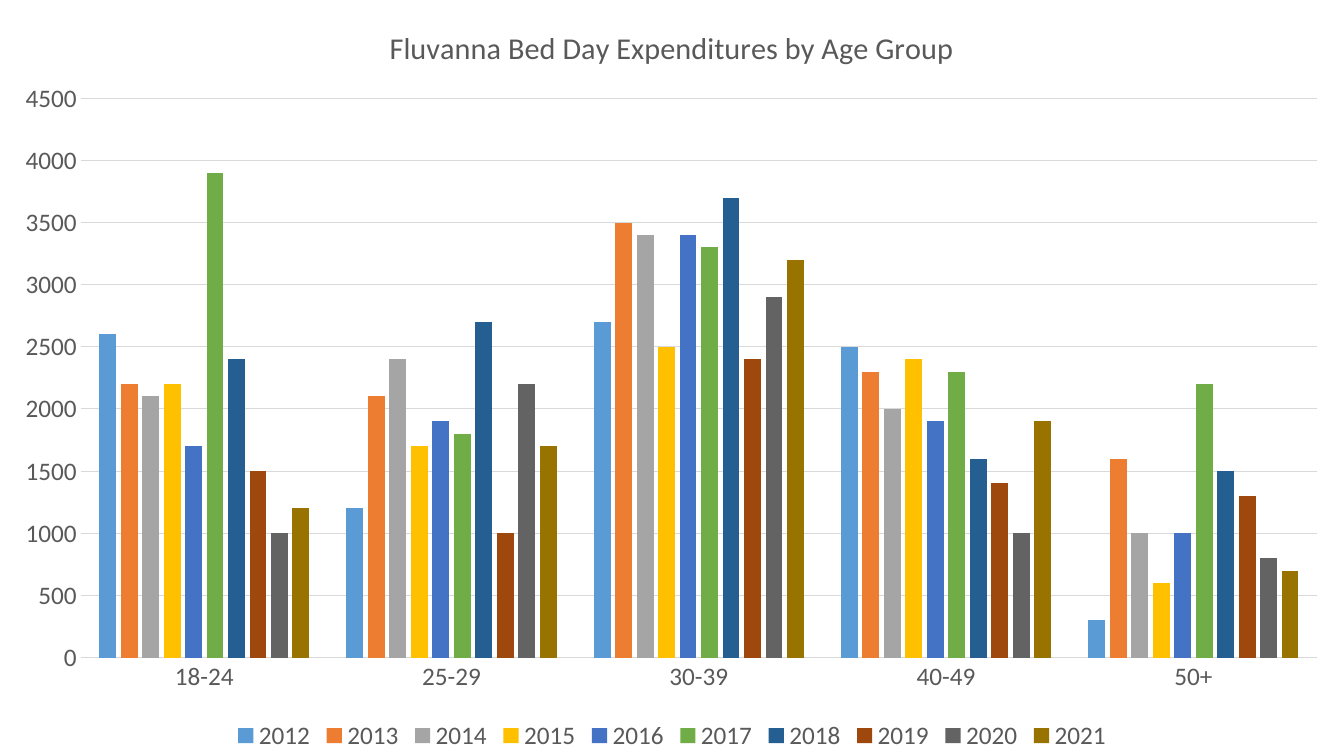
from lxml import etree
from pptx import Presentation
from pptx.chart.data import CategoryChartData
from pptx.dml.color import RGBColor
from pptx.enum.chart import XL_CHART_TYPE as ChartType
from pptx.enum.chart import XL_LEGEND_POSITION as LegendPosition
from pptx.enum.chart import XL_TICK_MARK as TickMark
from pptx.oxml.ns import qn
from pptx.util import Cm, Pt

WIDTH, HEIGHT = Cm(33.87), Cm(19.05)
FONT = "Calibri"
TITLE = "Fluvanna Bed Day Expenditures by Age Group"
TEXT_GREY = RGBColor(0x59, 0x59, 0x59)
LINE_GREY = RGBColor(0xD9, 0xD9, 0xD9)
PLOT_LAYOUT = [
    ("layoutTarget", "inner"), ("xMode", "edge"), ("yMode", "edge"),
    ("x", "0.06"), ("y", "0.13"), ("w", "0.92"), ("h", "0.74"),
]
AGE_GROUPS = ["18-24", "25-29", "30-39", "40-49", "50+"]
YEARS = [
    ("2012", RGBColor(0x5B, 0x9B, 0xD5), [2600, 1200, 2700, 2500, 300]),
    ("2013", RGBColor(0xED, 0x7D, 0x31), [2200, 2100, 3500, 2300, 1600]),
    ("2014", RGBColor(0xA5, 0xA5, 0xA5), [2100, 2400, 3400, 2000, 1000]),
    ("2015", RGBColor(0xFF, 0xC0, 0x00), [2200, 1700, 2500, 2400, 600]),
    ("2016", RGBColor(0x44, 0x72, 0xC4), [1700, 1900, 3400, 1900, 1000]),
    ("2017", RGBColor(0x70, 0xAD, 0x47), [3900, 1800, 3300, 2300, 2200]),
    ("2018", RGBColor(0x25, 0x5E, 0x91), [2400, 2700, 3700, 1600, 1500]),
    ("2019", RGBColor(0x9E, 0x48, 0x0E), [1500, 1000, 2400, 1400, 1300]),
    ("2020", RGBColor(0x63, 0x63, 0x63), [1000, 2200, 2900, 1000, 800]),
    ("2021", RGBColor(0x99, 0x73, 0x00), [1200, 1700, 3200, 1900, 700]),
]


def style_font(font, size):
    font.name = FONT
    font.size = Pt(size)
    font.bold = False
    font.color.rgb = TEXT_GREY


def style_line(line):
    line.color.rgb = LINE_GREY
    line.width = Pt(0.75)


def add_column_chart(slide):
    data = CategoryChartData()
    data.categories = AGE_GROUPS
    for year, _, values in YEARS:
        data.add_series(year, values)
    frame = slide.shapes.add_chart(
        ChartType.COLUMN_CLUSTERED, 0, 0, WIDTH, HEIGHT, data)
    return frame.chart


def place_plot(chart):
    area = chart.plots[0]._element.getparent()
    for layout in area.findall(qn("c:layout")):
        area.remove(layout)
    layout = etree.Element(qn("c:layout"))
    manual = etree.SubElement(layout, qn("c:manualLayout"))
    for name, value in PLOT_LAYOUT:
        etree.SubElement(manual, qn(f"c:{name}")).set("val", value)
    area.insert(0, layout)


def style_columns(chart):
    plot = chart.plots[0]
    plot.gap_width = 219
    plot.overlap = -27
    plot.vary_by_categories = False
    for series, (_, color, _) in zip(plot.series, YEARS):
        series.format.fill.solid()
        series.format.fill.fore_color.rgb = color


def style_axes(chart):
    ages, amounts = chart.category_axis, chart.value_axis
    for axis in (ages, amounts):
        axis.major_tick_mark = TickMark.NONE
        axis.minor_tick_mark = TickMark.NONE
        style_font(axis.tick_labels.font, 18)
    style_line(ages.format.line)
    amounts.format.line.fill.background()
    amounts.minimum_scale = 0
    amounts.maximum_scale = 4500
    amounts.major_unit = 500
    amounts.has_major_gridlines = True
    style_line(amounts.major_gridlines.format.line)


def add_title(chart):
    chart.has_title = True
    title = chart.chart_title
    title.include_in_layout = False
    para = title.text_frame.paragraphs[0]
    para.text = TITLE
    style_font(para.font, 21.6)
    style_font(para.runs[0].font, 21.6)


def add_legend(chart):
    chart.has_legend = True
    chart.legend.position = LegendPosition.BOTTOM
    chart.legend.include_in_layout = False
    style_font(chart.legend.font, 18)


def main():
    deck = Presentation()
    deck.slide_width, deck.slide_height = WIDTH, HEIGHT
    slide = deck.slides.add_slide(deck.slide_layouts.get_by_name("Blank"))
    chart = add_column_chart(slide)
    style_font(chart.font, 18)
    place_plot(chart)
    style_columns(chart)
    style_axes(chart)
    add_title(chart)
    add_legend(chart)
    deck.save("out.pptx")


if __name__ == "__main__":
    main()
